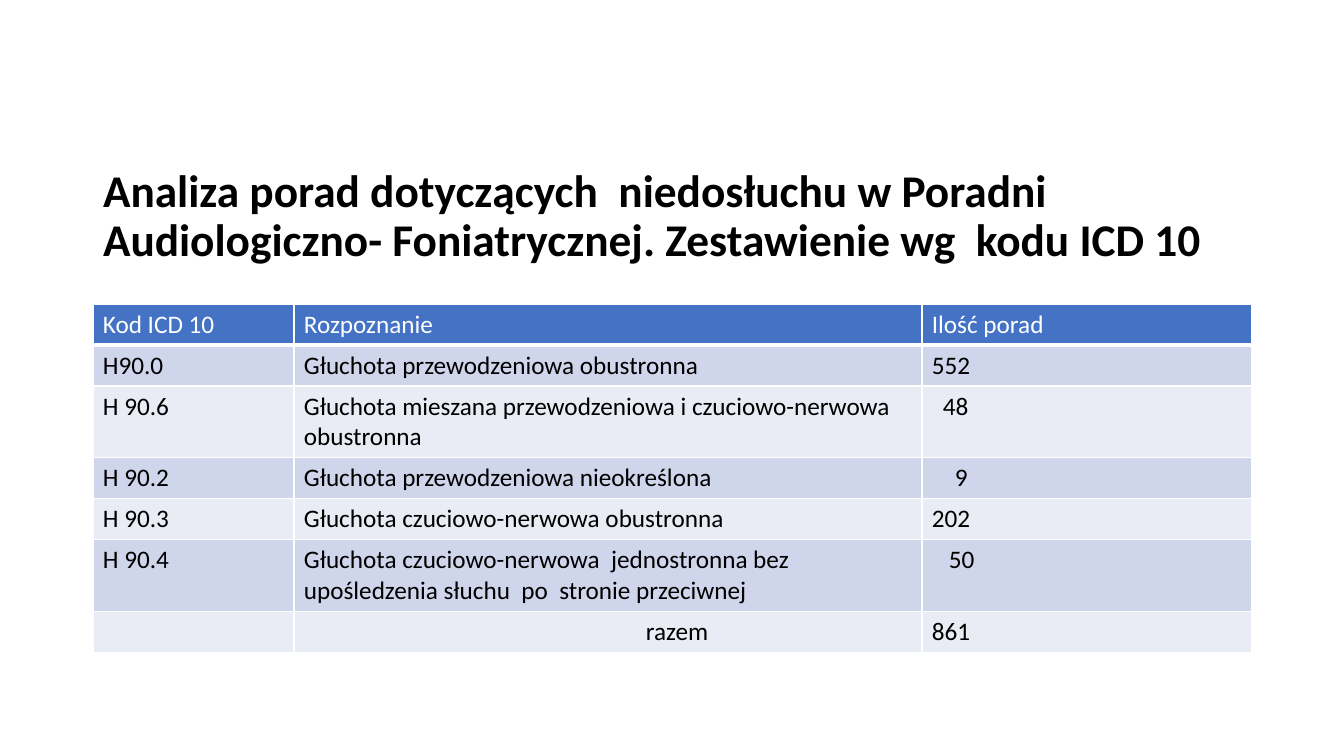
from lxml import etree
from pptx import Presentation
from pptx.dml.color import RGBColor as RGB
from pptx.enum.text import MSO_ANCHOR as Anchor, MSO_AUTO_SIZE as AutoSize, PP_ALIGN as Align
from pptx.oxml.ns import qn
from pptx.util import Emu, Pt

THEME = {
    "font": "Calibri", "title_size": 32.4, "table_size": 18,
    "text": "000000", "header_text": "FFFFFF", "header_fill": "4472C4",
    "bands": ("CFD5EA", "E9EBF5"), "border": "FFFFFF",
}
CELL_MARGIN = 10


def px(n):
    return Emu(round(n * 914400 / 100.8))


def style_font(font, size, color, bold):
    values = {"name": THEME["font"], "size": Pt(size), "bold": bold}
    for name, value in values.items():
        setattr(font, name, value)
    font.color.rgb = RGB.from_string(color)


prs = Presentation()
prs.slide_width, prs.slide_height = px(1344), px(756)
s = prs.slides.add_slide(prs.slide_layouts[5])

# Title
title = s.shapes.title
for name, value in {"left": 93, "top": 144, "width": 1159, "height": 146}.items():
    setattr(title, name, px(value))
tf = title.text_frame
for name, value in {"word_wrap": True, "auto_size": AutoSize.NONE,
                    "vertical_anchor": Anchor.MIDDLE}.items():
    setattr(tf, name, value)
p = tf.paragraphs[0]
p.alignment, p.line_spacing = Align.LEFT, 0.9
r = p.add_run()
r.text = ("Analiza porad dotyczących  niedosłuchu w Poradni  "
          "Audiologiczno- Foniatrycznej. Zestawienie wg  kodu ICD 10")
style_font(r.font, THEME["title_size"], THEME["text"], True)

# Table contents, and the extra left indent of single cells by (row, column)
rows = [
    ("Kod ICD 10", "Rozpoznanie", "Ilość porad"),
    ("H90.0", "Głuchota przewodzeniowa obustronna", "552"),
    ("H 90.6", "Głuchota mieszana przewodzeniowa i czuciowo-nerwowa obustronna", "48"),
    ("H 90.2", "Głuchota przewodzeniowa nieokreślona", "9"),
    ("H 90.3", "Głuchota czuciowo-nerwowa obustronna", "202"),
    ("H 90.4", "Głuchota czuciowo-nerwowa  jednostronna bez "
               "upośledzenia słuchu  po  stronie przeciwnej", "50"),
    ("", "razem", "861"),
]
indents = {(2, 2): 11, (3, 2): 23, (5, 2): 17, (6, 1): 342}

# Table grid
frame = s.shapes.add_table(len(rows), 3, px(93), px(304), px(1159), px(346))
table = frame.table
for column, width in zip(table.columns, (201, 628, 330)):
    column.width = px(width)
for row in table.rows:
    row.height = px(41)
frame.height = px(346)

# Cells
for i, row in enumerate(rows):
    header = i == 0
    fill = THEME["header_fill"] if header else THEME["bands"][(i - 1) % 2]
    color = THEME["header_text"] if header else THEME["text"]
    for j, text in enumerate(row):
        cell = table.cell(i, j)
        cell.margin_left = px(CELL_MARGIN + indents.get((i, j), 0))
        tc_pr = cell._tc.get_or_add_tcPr()
        for side in ("lnL", "lnR", "lnT", "lnB"):
            weight = 3 if header and side == "lnB" else 1
            ln = etree.SubElement(tc_pr, qn(f"a:{side}"), w=str(Pt(weight)))
            solid = etree.SubElement(ln, qn("a:solidFill"))
            etree.SubElement(solid, qn("a:srgbClr"), val=THEME["border"])
        cell.fill.solid()
        cell.fill.fore_color.rgb = RGB.from_string(fill)
        p = cell.text_frame.paragraphs[0]
        if text:
            r = p.add_run()
            r.text = text
            style_font(r.font, THEME["table_size"], color, False)
        else:
            style_font(p.font, THEME["table_size"], color, False)

prs.save("out.pptx")
